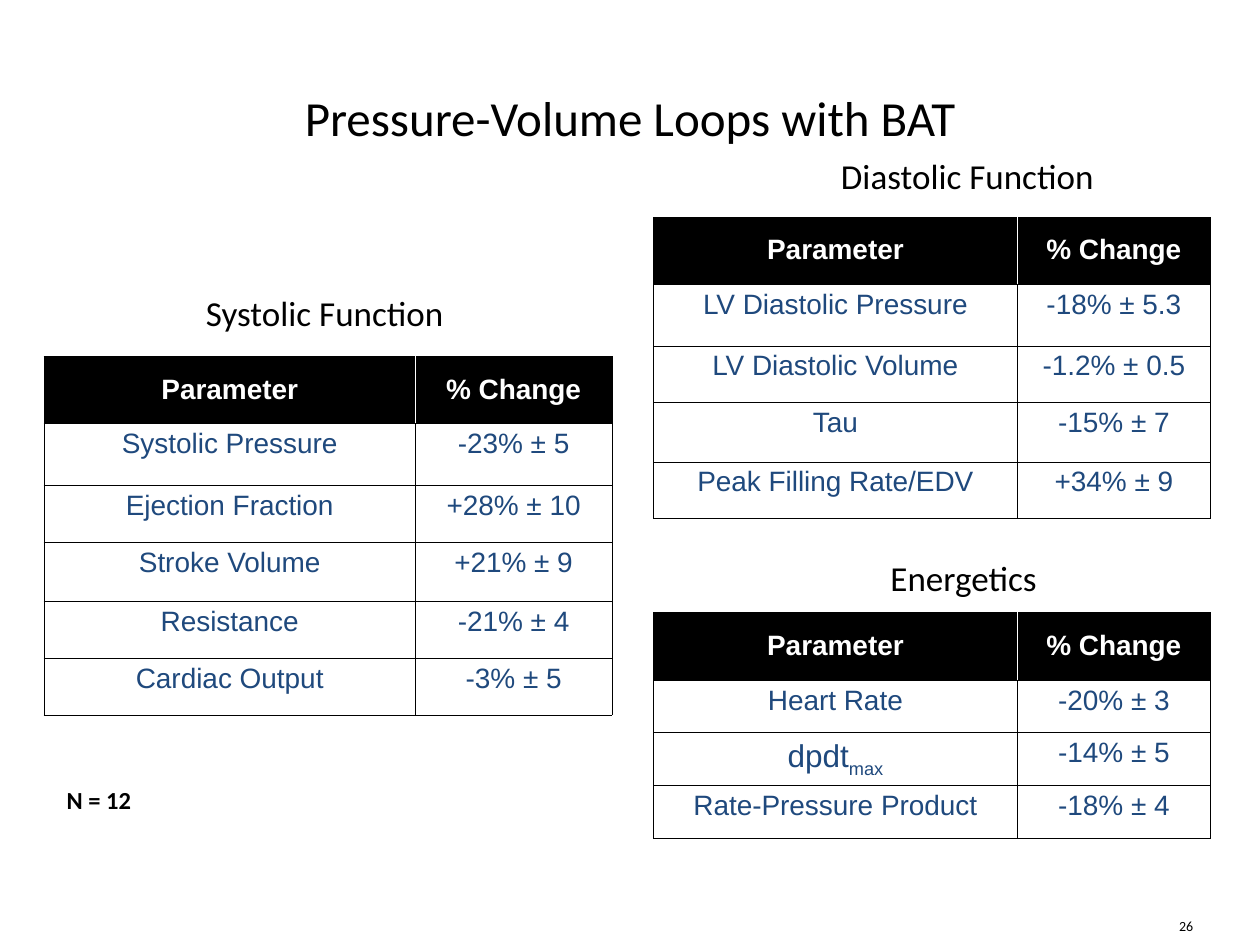
from pptx import Presentation
from pptx.dml.color import RGBColor
from pptx.enum.shapes import MSO_SHAPE
from pptx.enum.text import MSO_ANCHOR, PP_ALIGN
from pptx.oxml import parse_xml
from pptx.oxml.ns import nsdecls
from pptx.util import Pt

ROUNDED = MSO_SHAPE.ROUNDED_RECTANGLE
MIDDLE, TOP = MSO_ANCHOR.MIDDLE, MSO_ANCHOR.TOP
LEFT, CENTER, RIGHT = PP_ALIGN.LEFT, PP_ALIGN.CENTER, PP_ALIGN.RIGHT
COLORS = {"black": "000000", "white": "FFFFFF", "navy": "1F497D"}
HEADER = ("Parameter", "% Change")
SUBSCRIPTS = {"dpdtmax": ("dpdt", "max")}

SYSTOLIC = [
    ("Systolic Pressure", "-23% ± 5"),
    ("Ejection Fraction", "+28% ± 10"),
    ("Stroke Volume", "+21% ± 9"),
    ("Resistance", "-21% ± 4"),
    ("Cardiac Output", "-3% ± 5"),
]
DIASTOLIC = [
    ("LV Diastolic Pressure", "-18% ± 5.3"),
    ("LV Diastolic Volume", "-1.2% ± 0.5"),
    ("Tau", "-15% ± 7"),
    ("Peak Filling Rate/EDV", "+34% ± 9"),
]
ENERGETICS = [
    ("Heart Rate", "-20% ± 3"),
    ("dpdtmax", "-14% ± 5"),
    ("Rate-Pressure Product", "-18% ± 4"),
]


def style_run(run, size, color, font="Calibri", bold=False):
    run.font.size = Pt(size)
    run.font.name = font
    run.font.bold = bold
    run.font.color.rgb = RGBColor.from_string(COLORS[color])


def write_text(shape, text, size, align, anchor=MIDDLE, bold=False, wrap=True):
    frame = shape.text_frame
    frame.text = text
    frame.word_wrap = wrap
    frame.vertical_anchor = anchor
    para = frame.paragraphs[0]
    para.alignment = align
    style_run(para.runs[0], size, "black", bold=bold)


def add_label(page, box, text, size, align, **options):
    shape = page.shapes.add_textbox(*[Pt(length) for length in box])
    write_text(shape, text, size, align, **options)


def add_heading(page, box, text):
    shape = page.shapes.add_shape(ROUNDED, *[Pt(length) for length in box])
    shape.adjustments[0] = 0.12
    shape.shadow.inherit = False
    shape.fill.background()
    shape.line.fill.background()
    write_text(shape, text, 20, CENTER, wrap=False)


def set_borders(cell, left="black", right="black"):
    edges = {"lnL": left, "lnR": right, "lnT": "black", "lnB": "black"}
    properties = cell._tc.get_or_add_tcPr()
    for index, (edge, color) in enumerate(edges.items()):
        properties.insert(index, parse_xml(
            f'<a:{edge} {nsdecls("a")} w="6350"><a:solidFill>'
            f'<a:srgbClr val="{COLORS[color]}"/></a:solidFill></a:{edge}>'))


def fill_cell(cell, text, is_header, inset):
    cell.fill.solid()
    background = "black" if is_header else "white"
    cell.fill.fore_color.rgb = RGBColor.from_string(COLORS[background])
    cell.vertical_anchor = MIDDLE if is_header else TOP
    cell.margin_left = cell.margin_right = Pt(inset)
    para = cell.text_frame.paragraphs[0]
    para.alignment = CENTER
    para.line_spacing = 0.95
    parts = SUBSCRIPTS.get(text, (text,))
    size = 18 if len(parts) > 1 else 16
    for index, part in enumerate(parts):
        run = para.add_run()
        run.text = part
        style_run(run, size, "white" if is_header else "navy", "Arial", is_header)
        if index:
            run._r.get_or_add_rPr().set("baseline", "-25000")


def add_results(page, left, top, widths, heights, rows, inset=7.2):
    frame = page.shapes.add_table(
        len(heights), len(widths), Pt(left), Pt(top), Pt(sum(widths)), Pt(sum(heights)))
    table = frame.table
    table.first_row = table.horz_banding = False
    for column, width in zip(table.columns, widths):
        column.width = Pt(width)
    for row_index, (values, height) in enumerate(zip([HEADER, *rows], heights)):
        is_header = row_index == 0
        divider = "white" if is_header else "black"
        table.rows[row_index].height = Pt(height)
        for column_index, text in enumerate(values):
            cell = table.cell(row_index, column_index)
            fill_cell(cell, text, is_header, inset)
            set_borders(cell, **{"left" if column_index else "right": divider})


def main():
    deck = Presentation()
    deck.slide_width, deck.slide_height = Pt(720), Pt(540)
    page = deck.slides.add_slide(deck.slide_layouts[6])

    add_label(page, (36, 21.6, 648, 90), "Pressure-Volume Loops with BAT", 28, CENTER)

    heights = [38.2, 35.2, 32.5, 33.9, 32.5, 32.5]
    right_widths = [208, 110.3]
    add_results(page, 25.2, 203.9, [212.2, 112.3], heights, SYSTOLIC, inset=14.4)
    add_results(page, 373.4, 124.3, right_widths, heights[:5], DIASTOLIC)
    add_results(page, 373.4, 350, right_widths, [38.7] + [29.8] * 3, ENERGETICS)

    add_heading(page, (69.8, 162.7, 231.5, 31.7), "Systolic Function")
    add_heading(page, (437, 84.2, 231.5, 31.7), "Diastolic Function")
    add_heading(page, (434.9, 313.9, 231.5, 31.7), "Energetics")

    add_label(page, (31, 445, 56.2, 24.5), "N = 12", 14, LEFT,
              anchor=TOP, bold=True, wrap=False)
    add_label(page, (658.8, 519.1, 30.2, 20.2), "26", 8, RIGHT)
    deck.save("out.pptx")


if __name__ == "__main__":
    main()
